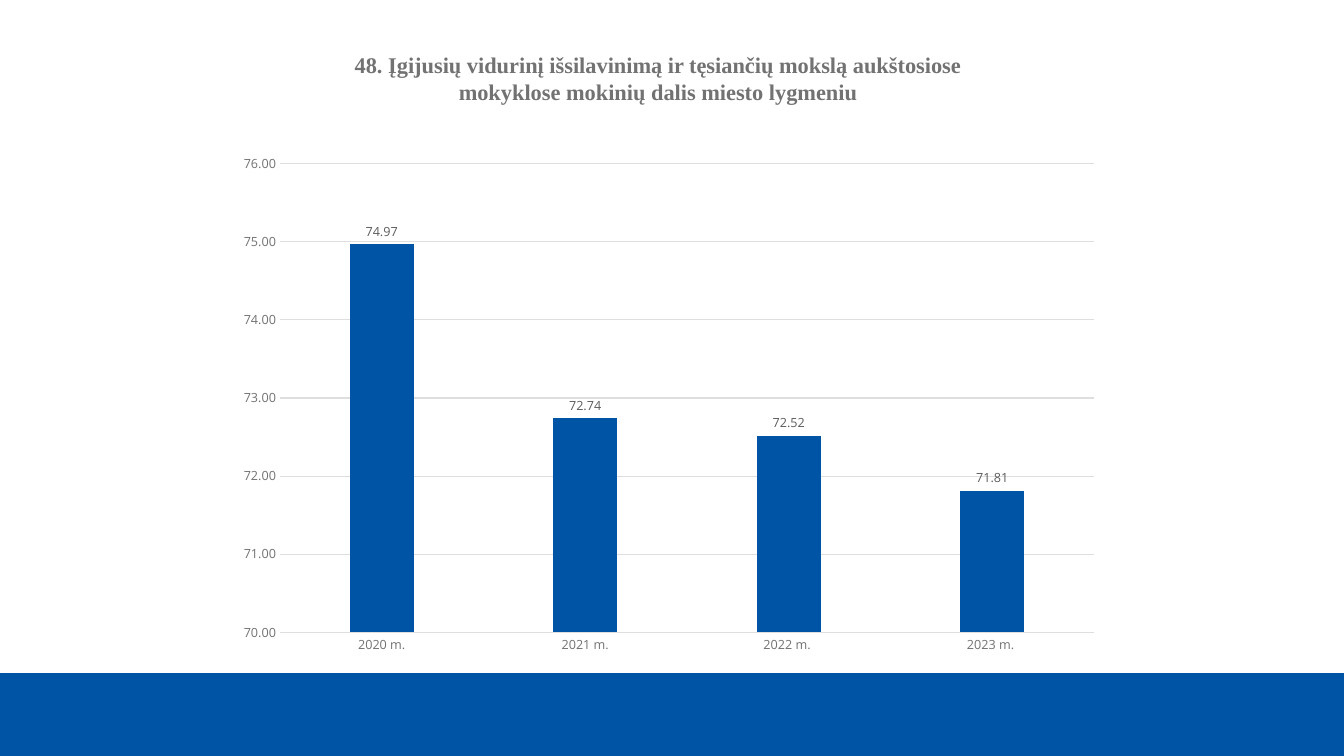
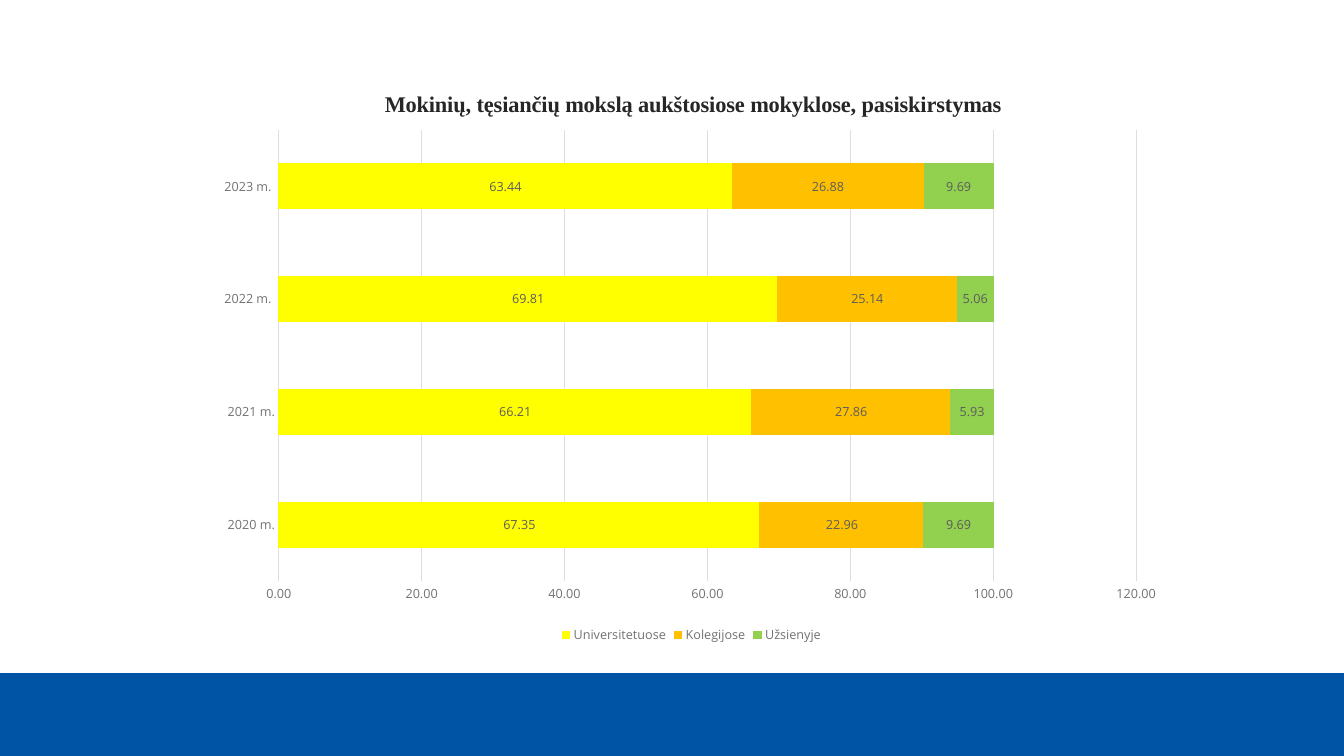
from dataclasses import dataclass
from typing import Optional

from lxml.etree import SubElement
from pptx import Presentation
from pptx.chart.chart import Chart
from pptx.chart.data import CategoryChartData
from pptx.dml.color import RGBColor
from pptx.enum.chart import XL_CHART_TYPE, XL_LABEL_POSITION, XL_LEGEND_POSITION, XL_TICK_MARK
from pptx.enum.shapes import MSO_SHAPE
from pptx.enum.text import PP_ALIGN
from pptx.oxml.ns import qn
from pptx.slide import Slide
from pptx.text.text import Font, _Paragraph as Paragraph
from pptx.util import Emu, Pt

PAGE_WIDTH, PAGE_HEIGHT = 1344, 756
EMU_PER_PX = 12192000 / PAGE_WIDTH
YEARS = ("2020 m.", "2021 m.", "2022 m. ", "2023 m. ")


@dataclass(frozen=True)
class Theme:
    blue: str = "0054A5"
    yellow: str = "FFFF00"
    orange: str = "FFC000"
    green: str = "92D050"
    dark: str = "262626"
    grey: str = "727272"
    label: str = "5C5C5C"
    grid: str = "DEDEDE"
    title_font: str = "Times New Roman"
    chart_font: str = "Open Sans"
    title_size: int = 16
    chart_size: int = 10
    label_size: int = 9
    line_width: float = 0.75
    number_format: str = "0.00"


THEME = Theme()


@dataclass(frozen=True)
class Area:
    left: int
    top: int
    width: int
    height: int

    def emu(self) -> tuple[Emu, ...]:
        lengths = (self.left, self.top, self.width, self.height)
        return tuple(px(length) for length in lengths)


@dataclass(frozen=True)
class Series:
    name: str
    values: tuple[float, ...]
    color: str
    outlined: bool = False


@dataclass(frozen=True)
class BarChart:
    kind: XL_CHART_TYPE
    area: Area
    plot: tuple[float, ...]
    series: tuple[Series, ...]
    scale: tuple[float, float, float]
    gap: int
    overlap: int
    label_position: XL_LABEL_POSITION
    title: Optional[str] = None
    title_place: tuple[float, ...] = ()


SHARE_CHART = BarChart(
    kind=XL_CHART_TYPE.COLUMN_CLUSTERED,
    area=Area(226, 122, 884, 543),
    plot=(0.061, 0.077, 0.921, 0.863),
    series=(Series("Series 1", (74.97, 72.74, 72.52, 71.81), THEME.blue),),
    scale=(70, 76, 1),
    gap=219,
    overlap=-27,
    label_position=XL_LABEL_POSITION.OUTSIDE_END,
)

SPLIT_CHART = BarChart(
    kind=XL_CHART_TYPE.BAR_STACKED,
    area=Area(206, 62, 971, 586),
    plot=(0.075, 0.116, 0.883, 0.77),
    series=(
        Series("Universitetuose", (67.35, 66.21, 69.81, 63.44), THEME.yellow, True),
        Series("Kolegijose", (22.96, 27.86, 25.14, 26.88), THEME.orange, True),
        Series("Užsienyje", (9.69, 5.93, 5.06, 9.69), THEME.green, True),
    ),
    scale=(0, 120, 20),
    gap=150,
    overlap=100,
    label_position=XL_LABEL_POSITION.CENTER,
    title="Mokinių, tęsiančių mokslą aukštosiose mokyklose, pasiskirstymas",
    title_place=(0.18, 0.04),
)


def px(length: int) -> Emu:
    return Emu(round(length * EMU_PER_PX))


def rgb(color: str) -> RGBColor:
    return RGBColor.from_string(color)


def style_font(font: Font, size: int, color: str, name: str = THEME.chart_font,
               bold: bool = False) -> None:
    font.size = Pt(size)
    font.name = name
    font.bold = bold
    font.color.rgb = rgb(color)


def add_title_span(para: Paragraph, text: str, color: str) -> None:
    span = para.add_run()
    span.text = text
    style_font(span.font, THEME.title_size, color, THEME.title_font, bold=True)


def add_band(page: Slide) -> None:
    band = page.shapes.add_shape(MSO_SHAPE.RECTANGLE, *Area(0, 673, PAGE_WIDTH, 83).emu())
    band.shadow.inherit = False
    band.fill.solid()
    band.fill.fore_color.rgb = rgb(THEME.blue)
    band.line.fill.background()


def add_heading(page: Slide, text: str) -> None:
    box = page.shapes.add_textbox(*Area(322, 46, 672, 65).emu())
    box.text_frame.word_wrap = True
    para = box.text_frame.paragraphs[0]
    para.alignment = PP_ALIGN.CENTER
    add_title_span(para, text, THEME.grey)


def set_layout(chart: Chart, tag: str, index: int, place: tuple[float, ...]) -> None:
    """Fix the place of a chart part, in fractions of the chart's size."""
    parent = chart.element.find(f".//{qn(tag)}")
    for old in parent.findall(qn("c:layout")):
        parent.remove(old)
    layout = SubElement(parent, qn("c:layout"))
    parent.insert(index, layout)
    manual = SubElement(layout, qn("c:manualLayout"))
    settings = {"xMode": "edge", "yMode": "edge", **dict(zip("xywh", place))}
    if len(place) == 4:
        settings = {"layoutTarget": "inner", **settings}
    for name, value in settings.items():
        SubElement(manual, qn(f"c:{name}")).set("val", str(value))


def style_axes(chart: Chart, scale: tuple[float, float, float]) -> None:
    values, categories = chart.value_axis, chart.category_axis
    for axis in (values, categories):
        axis.major_tick_mark = axis.minor_tick_mark = XL_TICK_MARK.NONE
        style_font(axis.tick_labels.font, THEME.label_size, THEME.grey)
    values.minimum_scale, values.maximum_scale, values.major_unit = scale
    values.tick_labels.number_format = THEME.number_format
    values.tick_labels.number_format_is_linked = False
    values.has_major_gridlines = True
    values.format.line.fill.background()
    for line in (values.major_gridlines.format.line, categories.format.line):
        line.color.rgb = rgb(THEME.grid)
        line.width = Pt(THEME.line_width)


def style_series(chart: Chart, design: BarChart) -> None:
    plot = chart.plots[0]
    plot.gap_width = design.gap
    plot.overlap = design.overlap
    plot.vary_by_categories = False
    for bars, series in zip(plot.series, design.series):
        bars.invert_if_negative = False
        bars.format.fill.solid()
        bars.format.fill.fore_color.rgb = rgb(series.color)
        if series.outlined:
            bars.format.line.color.rgb = rgb(series.color)
            bars.format.line.width = Pt(THEME.line_width)
        labels = bars.data_labels
        labels.show_value = True
        labels.number_format = THEME.number_format
        labels.number_format_is_linked = False
        labels.position = design.label_position
        style_font(labels.font, THEME.label_size, THEME.label)


def add_bar_chart(page: Slide, design: BarChart) -> None:
    data = CategoryChartData(number_format=THEME.number_format)
    data.categories = YEARS
    for series in design.series:
        data.add_series(series.name, series.values)
    chart = page.shapes.add_chart(design.kind, *design.area.emu(), data).chart
    style_font(chart.font, THEME.chart_size, THEME.dark)
    style_axes(chart, design.scale)
    style_series(chart, design)
    set_layout(chart, "c:plotArea", 0, design.plot)

    chart.has_title = design.title is not None
    if design.title:
        para = chart.chart_title.text_frame.paragraphs[0]
        add_title_span(para, design.title, THEME.dark)
        set_layout(chart, "c:title", 1, design.title_place)

    chart.has_legend = len(design.series) > 1
    if chart.has_legend:
        chart.legend.position = XL_LEGEND_POSITION.BOTTOM
        chart.legend.include_in_layout = False
        style_font(chart.legend.font, THEME.label_size, THEME.grey)


def main() -> None:
    deck = Presentation()
    deck.slide_width, deck.slide_height = px(PAGE_WIDTH), px(PAGE_HEIGHT)
    blank = deck.slide_layouts[6]
    share_page, split_page = (deck.slides.add_slide(blank) for _ in range(2))
    for page, design in ((share_page, SHARE_CHART), (split_page, SPLIT_CHART)):
        add_band(page)
        add_bar_chart(page, design)
    add_heading(
        share_page,
        "48. Įgijusių vidurinį išsilavinimą ir tęsiančių mokslą aukštosiose "
        "mokyklose mokinių dalis miesto lygmeniu",
    )
    deck.save("out.pptx")


if __name__ == "__main__":
    main()
